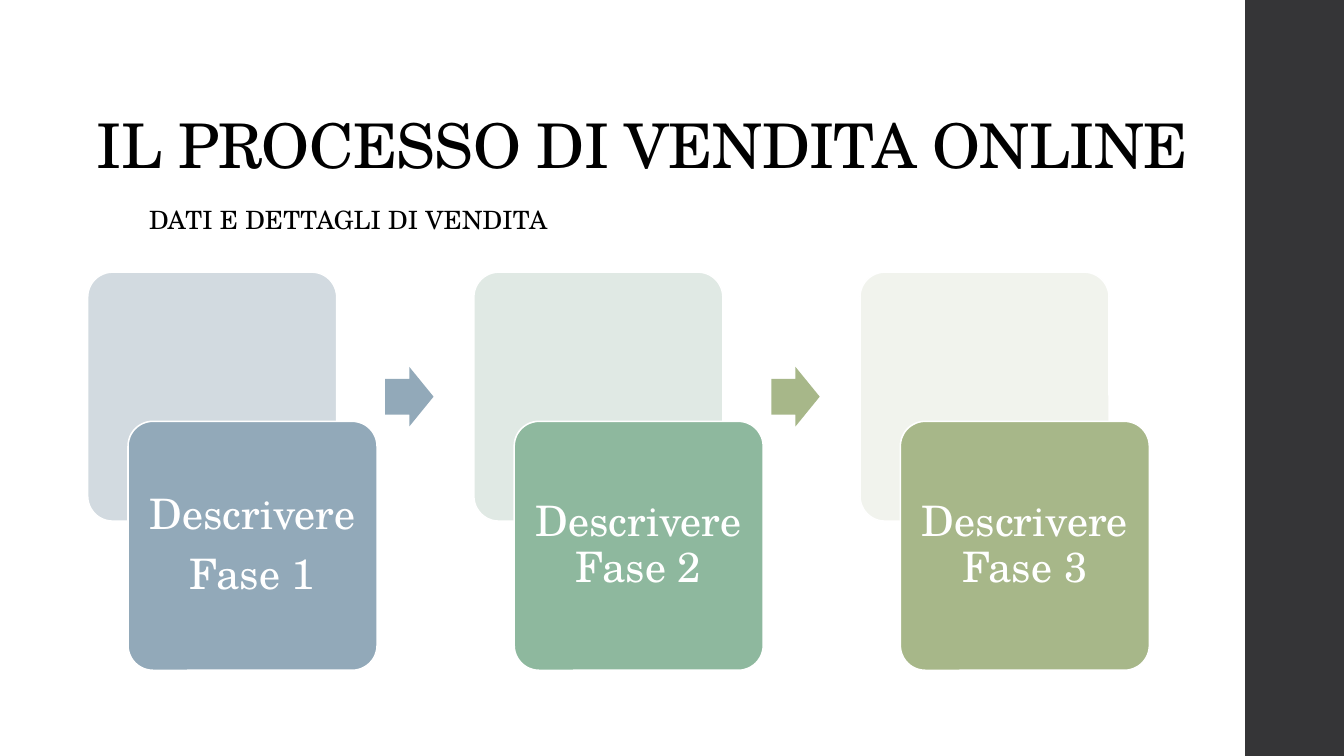
import pptx
import pptx.dml.color
import pptx.enum.shapes
import pptx.enum.text
import pptx.util

Inches = pptx.util.Inches
Pt = pptx.util.Pt
RGBColor = pptx.dml.color.RGBColor
Shape = pptx.enum.shapes.MSO_SHAPE
Align = pptx.enum.text.PP_ALIGN
Anchor = pptx.enum.text.MSO_ANCHOR

TITLE = "IL PROCESSO DI VENDITA ONLINE"
SUBTITLE = "DATI E DETTAGLI DI VENDITA"
FONT = "TeX Gyre Schola"

WHITE = RGBColor(0xFF, 0xFF, 0xFF)
BLACK = RGBColor(0x00, 0x00, 0x00)
CHARCOAL = RGBColor(0x35, 0x35, 0x37)
BLUE = RGBColor(0x92, 0xA9, 0xB9)
PALE_BLUE = RGBColor(0xD2, 0xDA, 0xE0)
GREEN = RGBColor(0x8E, 0xB8, 0x9E)
PALE_GREEN = RGBColor(0xE0, 0xE9, 0xE4)
OLIVE = RGBColor(0xA7, 0xB7, 0x89)
PALE_OLIVE = RGBColor(0xF1, 0xF3, 0xED)

# Text (\n new paragraph, \v line break), front colour, back colour, arrow colour
PHASES = [
    ("Descrivere\nFase 1", BLUE, PALE_BLUE, BLUE),
    ("Descrivere\vFase 2", GREEN, PALE_GREEN, OLIVE),
    ("Descrivere\vFase 3", OLIVE, PALE_OLIVE, None),
]
CARD = 2.47
PITCH = 3.83
LEFT, TOP = 0.87, 2.7
SHIFT_X, SHIFT_Y = 0.4, 1.48
ARROW_X, ARROW_Y = 2.95, 0.94
CARD_INSET = 0.12


def add_block(page, kind, place, fill, adjustments=(), outlined=False):
    block = page.shapes.add_shape(kind, *map(Inches, place))
    block.shadow.inherit = False
    block.fill.solid()
    block.fill.fore_color.rgb = fill
    for index, value in enumerate(adjustments):
        block.adjustments[index] = value
    if outlined:
        block.line.color.rgb = WHITE
        block.line.width = Pt(1.1)
    else:
        block.line.fill.background()
    return block


def write(box, text, size, color, paragraph_format, frame_format, tracking=None):
    """Fill a text frame; tracking is in hundredths of a point."""
    frame = box.text_frame
    frame.text = text
    frame.auto_size = pptx.enum.text.MSO_AUTO_SIZE.NONE
    frame.word_wrap = True
    for name, value in frame_format.items():
        setattr(frame, name, value)
    for para in frame.paragraphs:
        for name, value in paragraph_format.items():
            setattr(para, name, value)
        for span in para.runs:
            for name, value in {"name": FONT, "size": Pt(size)}.items():
                setattr(span.font, name, value)
            span.font.color.rgb = color
            if tracking is not None:
                span.font._element.set("spc", str(tracking))


def place_box(box, left, top, width, height):
    for name, value in zip(("left", "top", "width", "height"), (left, top, width, height)):
        setattr(box, name, Inches(value))


def add_phase(page, index, phase):
    text, front_color, back_color, arrow_color = phase
    left = LEFT + index * PITCH
    add_block(page, Shape.ROUNDED_RECTANGLE, (left, TOP, CARD, CARD),
              back_color, [0.1], True)
    card = add_block(page, Shape.ROUNDED_RECTANGLE,
                     (left + SHIFT_X, TOP + SHIFT_Y, CARD, CARD),
                     front_color, [0.1], True)
    margins = {"margin_" + side: Inches(CARD_INSET)
               for side in ("left", "top", "right", "bottom")}
    write(card, text, 30, WHITE,
          {"alignment": Align.CENTER, "line_spacing": 0.9, "space_after": Pt(10.5)},
          {"vertical_anchor": Anchor.MIDDLE, **margins})
    if arrow_color is not None:
        add_block(page, Shape.RIGHT_ARROW,
                  (left + ARROW_X, TOP + ARROW_Y, 0.48, 0.59), arrow_color, [0.6, 0.5])


def main():
    deck = pptx.Presentation()
    deck.slide_width, deck.slide_height = Inches(13.33), Inches(7.5)
    page = deck.slides.add_slide(deck.slide_layouts[5])

    add_block(page, Shape.RECTANGLE, (12.35, 0, 0.98, 7.5), CHARCOAL)
    title = page.shapes.title
    place_box(title, 0.86, 0.4, 11.12, 1.45)
    write(title, TITLE, 44, BLACK, {"alignment": Align.LEFT, "line_spacing": 0.9},
          {"vertical_anchor": Anchor.BOTTOM}, -50)
    subtitle = page.shapes.add_textbox(*map(Inches, (1.38, 2, 9.4, 0.5)))
    write(subtitle, SUBTITLE, 18, BLACK, {"alignment": Align.LEFT, "line_spacing": 0.95},
          {"vertical_anchor": Anchor.TOP}, 10)

    for index, phase in enumerate(PHASES):
        add_phase(page, index, phase)
    deck.save("out.pptx")


if __name__ == "__main__":
    main()
